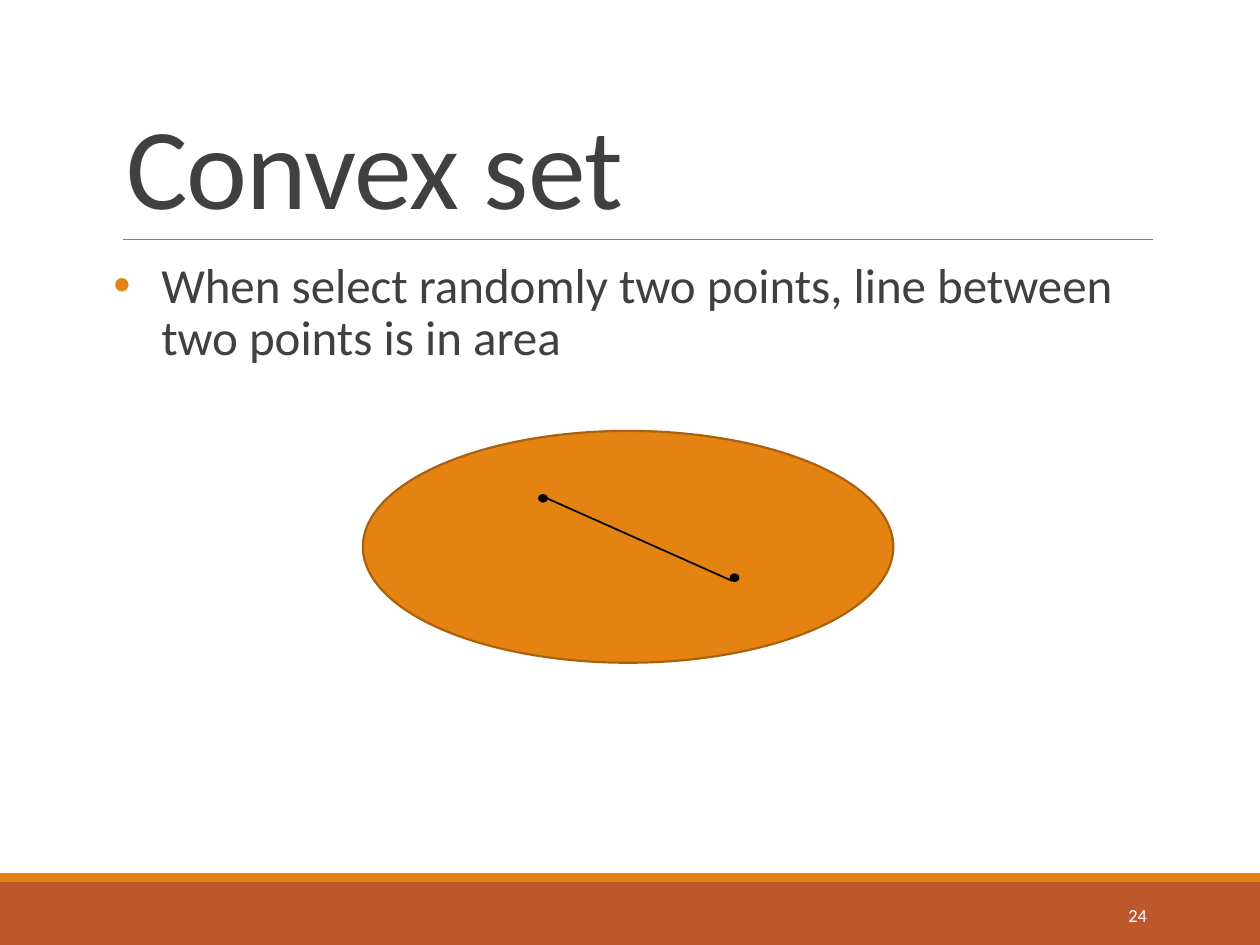
from lxml import etree
from pptx import Presentation
from pptx.dml.color import RGBColor
from pptx.enum.shapes import MSO_CONNECTOR, MSO_SHAPE
from pptx.enum.text import MSO_ANCHOR, PP_ALIGN
from pptx.oxml.ns import qn
from pptx.util import Inches, Pt

RECT, OVAL = MSO_SHAPE.RECTANGLE, MSO_SHAPE.OVAL
STRAIGHT = MSO_CONNECTOR.STRAIGHT
TOP, MIDDLE, BOTTOM = MSO_ANCHOR.TOP, MSO_ANCHOR.MIDDLE, MSO_ANCHOR.BOTTOM
LEFT, RIGHT = PP_ALIGN.LEFT, PP_ALIGN.RIGHT
FONT = "Calibri"
COLORS = {
    "orange": "E48312",
    "rust": "BD582C",
    "outline": "A9610D",
    "text": "404040",
    "rule": "808080",
    "black": "000000",
    "white": "FFFFFF",
}


def color(name):
    return RGBColor.from_string(COLORS[name])


def add_shape(s, kind, box, fill, line=None):
    sp = s.shapes.add_shape(kind, *map(Inches, box))
    sp.shadow.inherit = False
    sp.fill.solid()
    sp.fill.fore_color.rgb = color(fill)
    if line:
        sp.line.color.rgb = color(line)
        sp.line.width = Pt(1.25)
    else:
        sp.line.fill.background()


def add_line(s, start, end, line, width):
    cxn = s.shapes.add_connector(STRAIGHT, *map(Inches, start + end))
    cxn.line.color.rgb = color(line)
    cxn.line.width = Pt(width)
    etree.SubElement(cxn._element.spPr, qn("a:effectLst"))


def set_text(sp, text, size, font_color, anchor, align=LEFT, spacing=1.0, side=0.1):
    tf = sp.text_frame
    tf.text = text
    tf.word_wrap = True
    tf.vertical_anchor = anchor
    tf.margin_left = tf.margin_right = Inches(side)
    tf.margin_top = tf.margin_bottom = Inches(0.05)
    p = tf.paragraphs[0]
    p.alignment = align
    p.line_spacing = spacing
    r = p.runs[0]
    r.font.name = FONT
    r.font.size = Pt(size)
    r.font.color.rgb = color(font_color)
    return p


def add_title(s, text, box):
    sp = s.shapes.title
    sp.left, sp.top, sp.width, sp.height = map(Inches, box)
    p = set_text(sp, text, 66, "text", BOTTOM, spacing=0.85)
    p.runs[0].font._element.set("spc", "-50")


def add_text(s, text, box, *args, **kwargs):
    sp = s.shapes.add_textbox(*map(Inches, box))
    return set_text(sp, text, *args, **kwargs)


def add_bullet(p, indent, bullet_color):
    pPr = p._p.get_or_add_pPr()
    pPr.set("marL", str(Inches(indent)))
    pPr.set("indent", str(-Inches(indent)))
    bu_clr = etree.SubElement(pPr, qn("a:buClr"))
    etree.SubElement(bu_clr, qn("a:srgbClr"), val=COLORS[bullet_color])
    etree.SubElement(pPr, qn("a:buFont"), typeface="Arial")
    etree.SubElement(pPr, qn("a:buChar"), char="•")


def add_convex_set(s):
    add_shape(s, OVAL, (2.88, 3.42, 4.21, 1.84), "orange", "outline")
    for left, top in ((4.28, 3.93), (5.8, 4.56)):
        add_shape(s, OVAL, (left, top, 0.06, 0.05), "black", "black")
    add_line(s, (4.33, 3.95), (5.81, 4.61), "black", 1)


def main():
    prs = Presentation()
    prs.slide_width, prs.slide_height = Inches(10), Inches(7.5)
    s = prs.slides.add_slide(prs.slide_layouts[5])

    add_shape(s, RECT, (0, 7, 10, 0.5), "rust")
    add_shape(s, RECT, (0, 6.93, 10, 0.07), "orange")
    add_line(s, (0.98, 1.9), (9.15, 1.9), "rule", 0.5)
    add_title(s, "Convex set", (0.9, 0.31, 8.25, 1.59))

    p = add_text(
        s, "When select randomly two points, line between two points is in area",
        (0.9, 2.02, 8.25, 4.4), 28, "text", TOP, spacing=0.9, side=0)
    p.space_before, p.space_after = Pt(12), Pt(2)
    add_bullet(p, 0.38, "orange")

    add_text(s, "24", (8.12, 7.06, 1.08, 0.4), 10.5, "white", MIDDLE, align=RIGHT)
    add_convex_set(s)
    prs.save("out.pptx")


if __name__ == "__main__":
    main()
